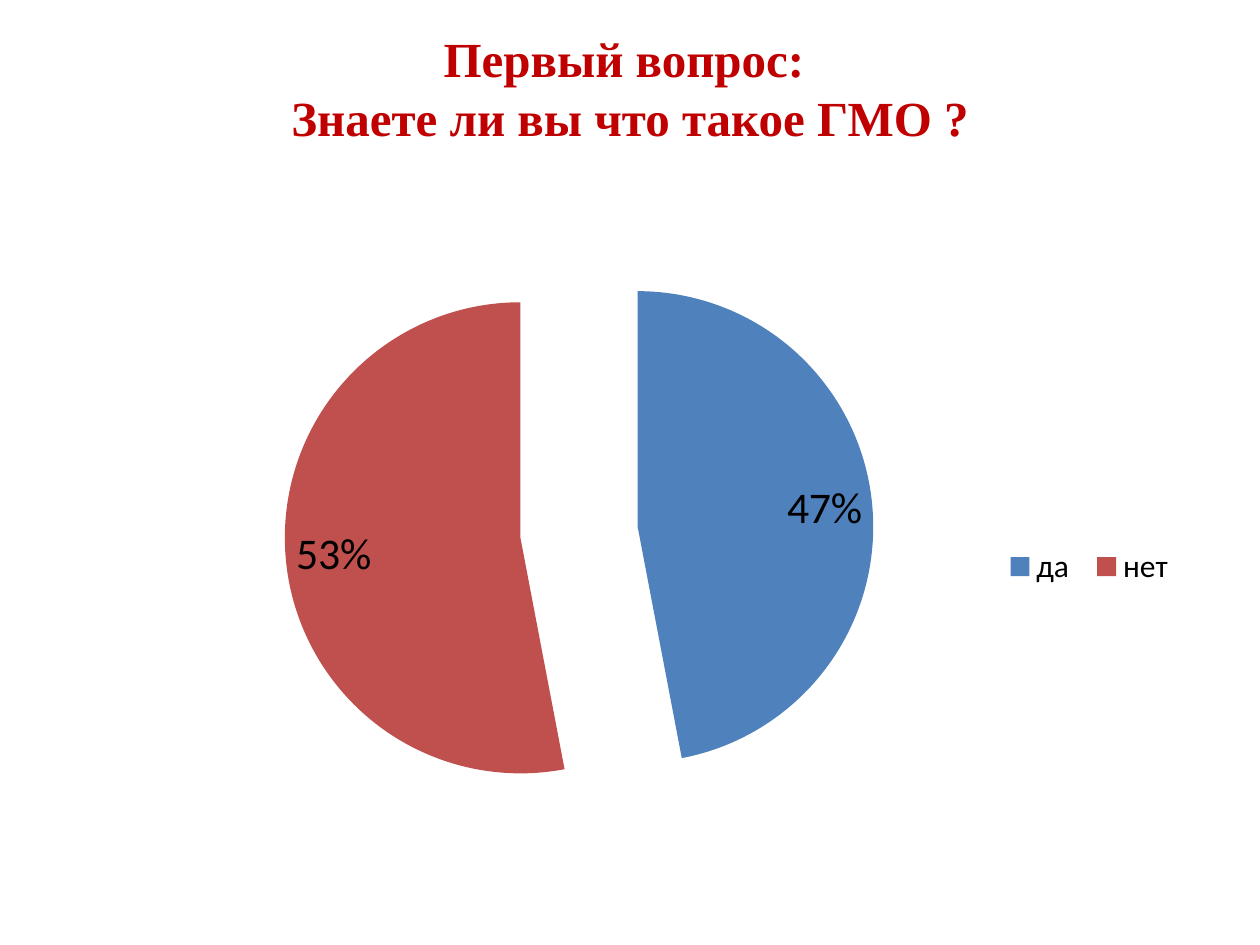
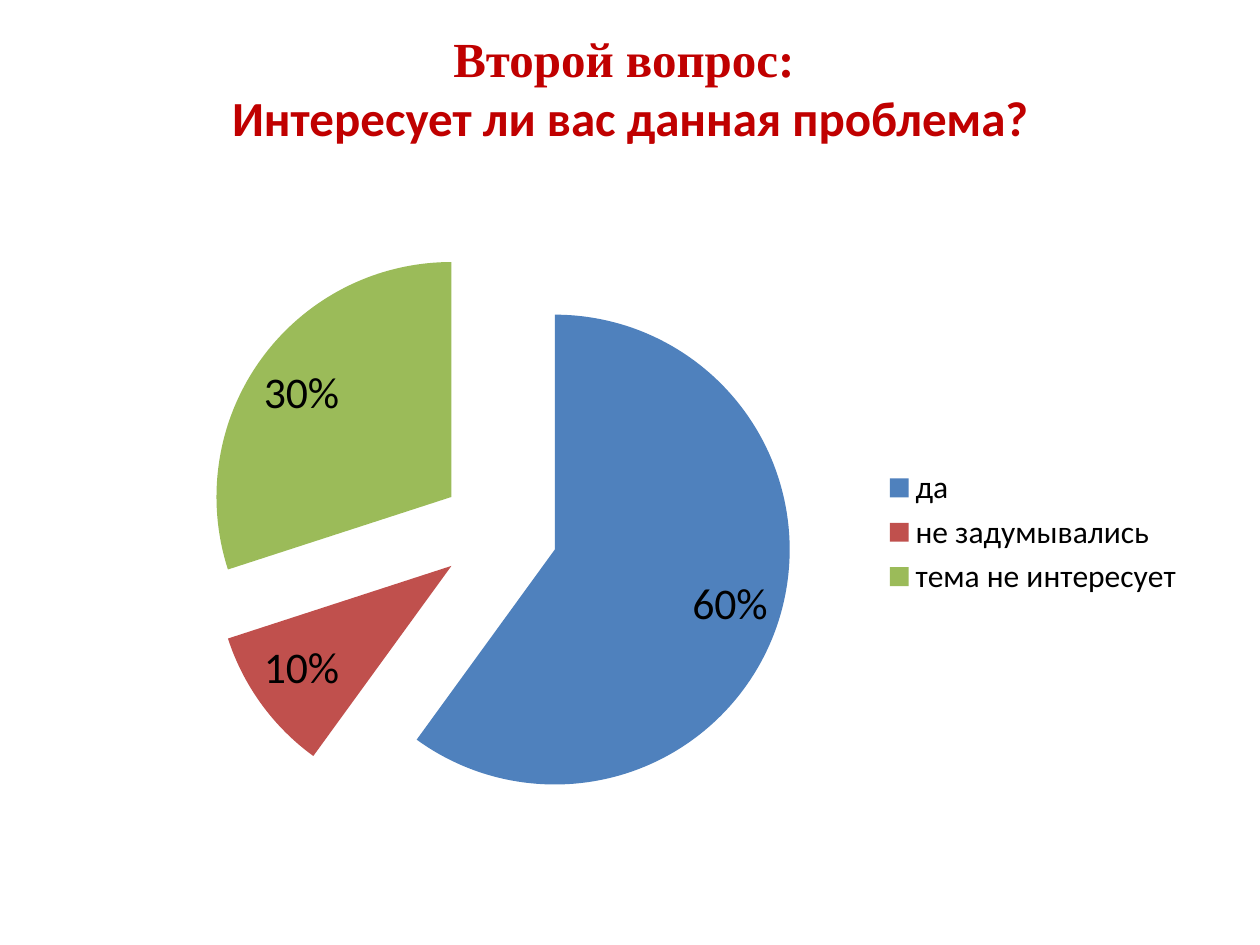
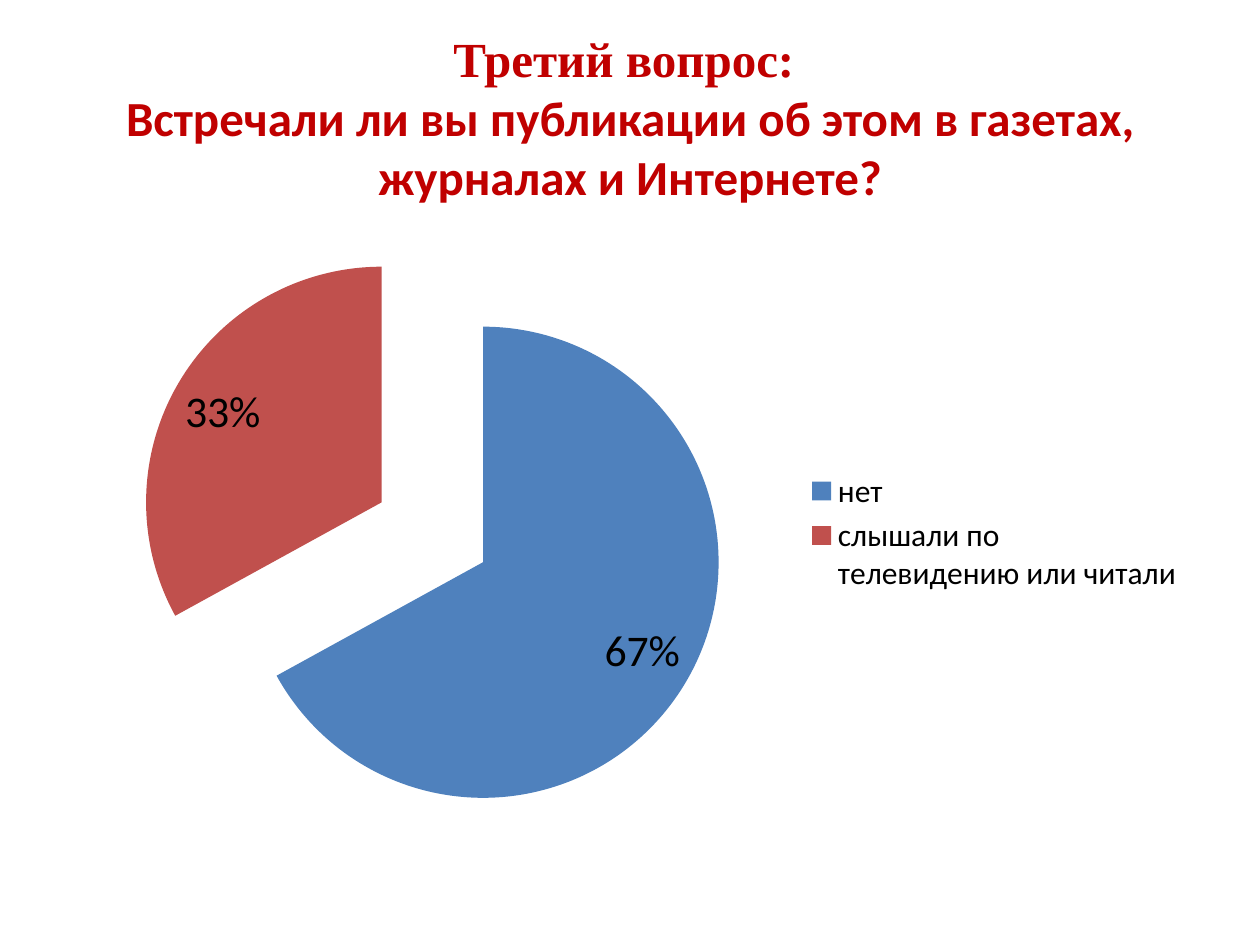
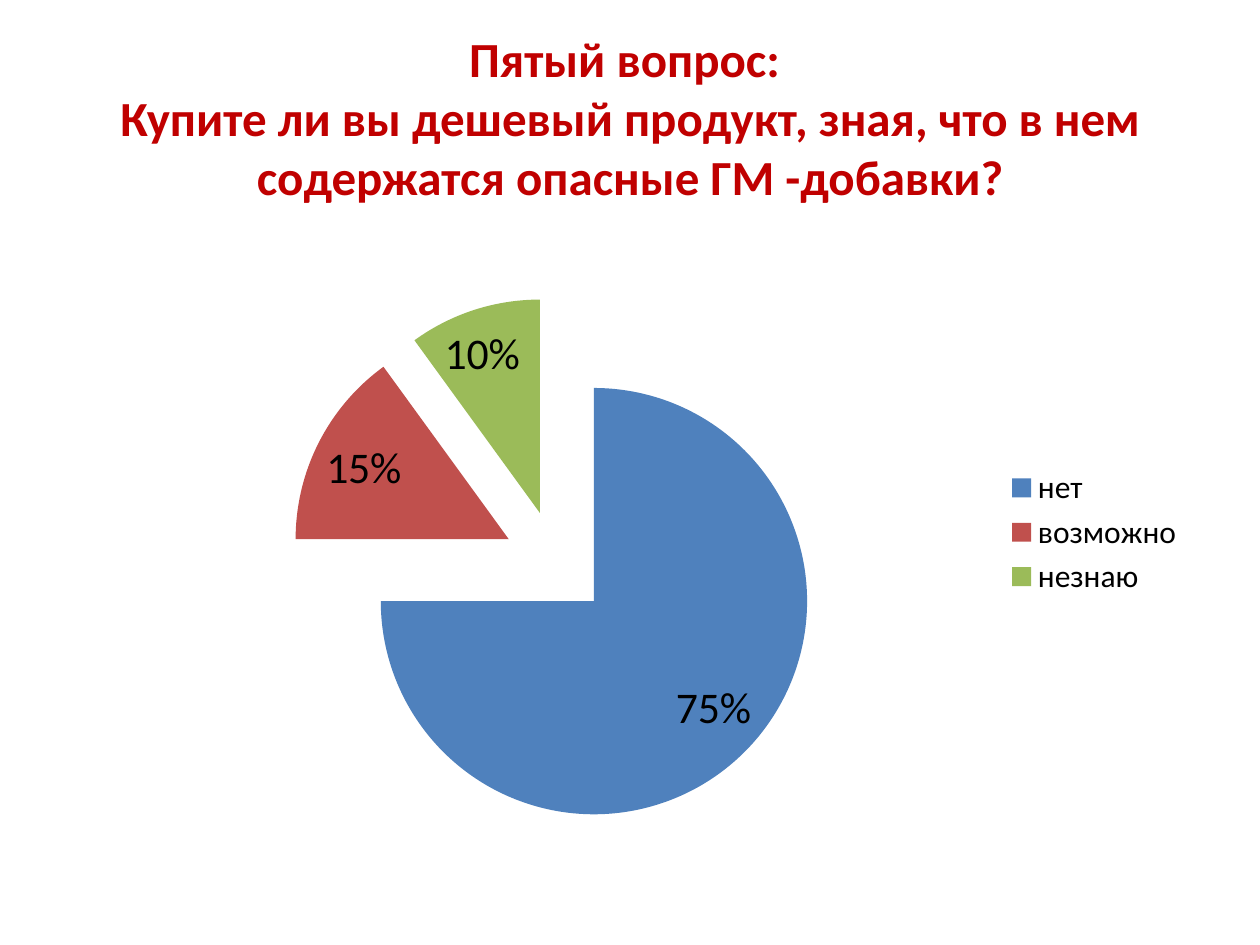
from lxml import etree
from pptx import Presentation
from pptx.chart.data import CategoryChartData
from pptx.dml.color import RGBColor
from pptx.enum.chart import XL_CHART_TYPE, XL_LEGEND_POSITION
from pptx.enum.text import MSO_ANCHOR, PP_ALIGN
from pptx.oxml.ns import qn
from pptx.util import Pt

PIE = XL_CHART_TYPE.PIE
LEGEND_RIGHT = XL_LEGEND_POSITION.RIGHT
MIDDLE = MSO_ANCHOR.MIDDLE
CENTER = PP_ALIGN.CENTER

SANS = "Calibri"
SERIF = "Times New Roman"
TITLE_RED = "C00000"
BLACK = "000000"
SLICE_COLORS = ["4F81BD", "C0504D", "9BBB59"]
EXPLOSION = 25
LEFT, CONTENT_WIDTH = 36, 648
TITLE_TOP, TITLE_HEIGHT = 21.6, 90
CHART_TOP, CHART_HEIGHT = 126, 356.4
TITLE_LINES, TITLE_LINE_HEIGHT = 3, 33.7

SURVEY = [
    dict(heading="Первый вопрос: ", question="Знаете ли вы что такое ГМО ?",
         fonts=(SERIF, SERIF), lines=2,
         answers={"да": 0.47, "нет": 0.53},
         legend_area=(0.82, 0.52, 0.17, 0.07)),
    dict(heading="Второй вопрос: ", question="Интересует ли вас данная проблема?",
         fonts=(SERIF, SANS), lines=2,
         answers={"да": 0.6, "не задумывались": 0.1, "тема не интересует": 0.3}),
    dict(heading="Третий вопрос: ",
         question="Встречали ли вы публикации об этом в газетах, журналах и Интернете?",
         fonts=(SERIF, SANS), lines=3,
         answers={"нет": 0.67, "слышали по телевидению или читали": 0.33}),
    dict(heading="Пятый вопрос: ",
         question="Купите ли вы дешевый продукт, зная, что в нем содержатся опасные ГМ -добавки?",
         fonts=(SANS, SANS), lines=3,
         answers={"нет": 0.75, "возможно": 0.15, "незнаю": 0.1},
         pie_area=(0.2, 0.12, 0.47, 0.86)),
]


def rgb(color):
    return RGBColor.from_string(color)


def style_font(font, name=SANS, size=18, color=BLACK, bold=False):
    font.name = name
    font.size = Pt(size)
    font.color.rgb = rgb(color)
    font.bold = bold


def add_text(paragraph, text, **text_format):
    run = paragraph.add_run()
    run.text = text
    style_font(run.font, **text_format)


def add_title(slide, heading, question, fonts, lines):
    box = slide.shapes.add_textbox(Pt(LEFT), Pt(TITLE_TOP), Pt(CONTENT_WIDTH), Pt(TITLE_HEIGHT))
    frame = box.text_frame
    frame.word_wrap = True
    frame.vertical_anchor = MIDDLE
    frame.margin_top = 0
    frame.margin_bottom = Pt((TITLE_LINES - lines) * TITLE_LINE_HEIGHT)
    title = frame.paragraphs[0]
    title.alignment = CENTER
    add_text(title, heading, name=fonts[0], size=28, color=TITLE_RED, bold=True)
    title.add_line_break()
    add_text(title, question, name=fonts[1], size=28, color=TITLE_RED, bold=True)


def set_area(parent, area, inner=False):
    layout = parent.find(qn("c:layout"))
    if layout is None:
        layout = etree.Element(qn("c:layout"))
        before = parent.find(qn("c:legendPos"))
        if before is None:
            parent.insert(0, layout)
        else:
            before.addnext(layout)
    manual = etree.SubElement(layout, qn("c:manualLayout"))
    settings = [("layoutTarget", "inner")] if inner else []
    settings += [("xMode", "edge"), ("yMode", "edge")]
    settings += zip("xywh", area)
    for tag, value in settings:
        etree.SubElement(manual, qn(f"c:{tag}")).set("val", str(value))


def explode_slices(series):
    explosion = etree.Element(qn("c:explosion"))
    explosion.set("val", str(EXPLOSION))
    series._element.find(qn("c:tx")).addnext(explosion)


def add_pie(slide, answers, legend_area=None, pie_area=None):
    data = CategoryChartData(number_format="0%")
    data.categories = list(answers)
    data.add_series("Series 1", list(answers.values()))
    chart = slide.shapes.add_chart(
        PIE, Pt(LEFT), Pt(CHART_TOP), Pt(CONTENT_WIDTH), Pt(CHART_HEIGHT), data).chart
    style_font(chart.font)
    chart.has_title = False
    chart.has_legend = True
    chart.legend.position = LEGEND_RIGHT
    chart.legend.include_in_layout = False

    plot = chart.plots[0]
    plot.vary_by_categories = True
    series = plot.series[0]
    explode_slices(series)
    for index, color in enumerate(SLICE_COLORS[:len(answers)]):
        fill = series.points[index].format.fill
        fill.solid()
        fill.fore_color.rgb = rgb(color)

    plot.has_data_labels = True
    labels = plot.data_labels
    labels.show_value = True
    labels.show_percentage = False
    labels.number_format = "0%"
    labels.number_format_is_linked = False
    style_font(labels.font, size=25)

    if legend_area:
        set_area(chart.legend._element, legend_area)
    if pie_area:
        set_area(chart._chartSpace.chart.plotArea, pie_area, inner=True)


def main():
    deck = Presentation()
    deck.slide_width, deck.slide_height = Pt(720), Pt(540)
    blank = deck.slide_layouts[6]
    for item in SURVEY:
        slide = deck.slides.add_slide(blank)
        add_title(slide, item["heading"], item["question"], item["fonts"], item["lines"])
        add_pie(slide, item["answers"], item.get("legend_area"), item.get("pie_area"))
    deck.save("out.pptx")


if __name__ == "__main__":
    main()
